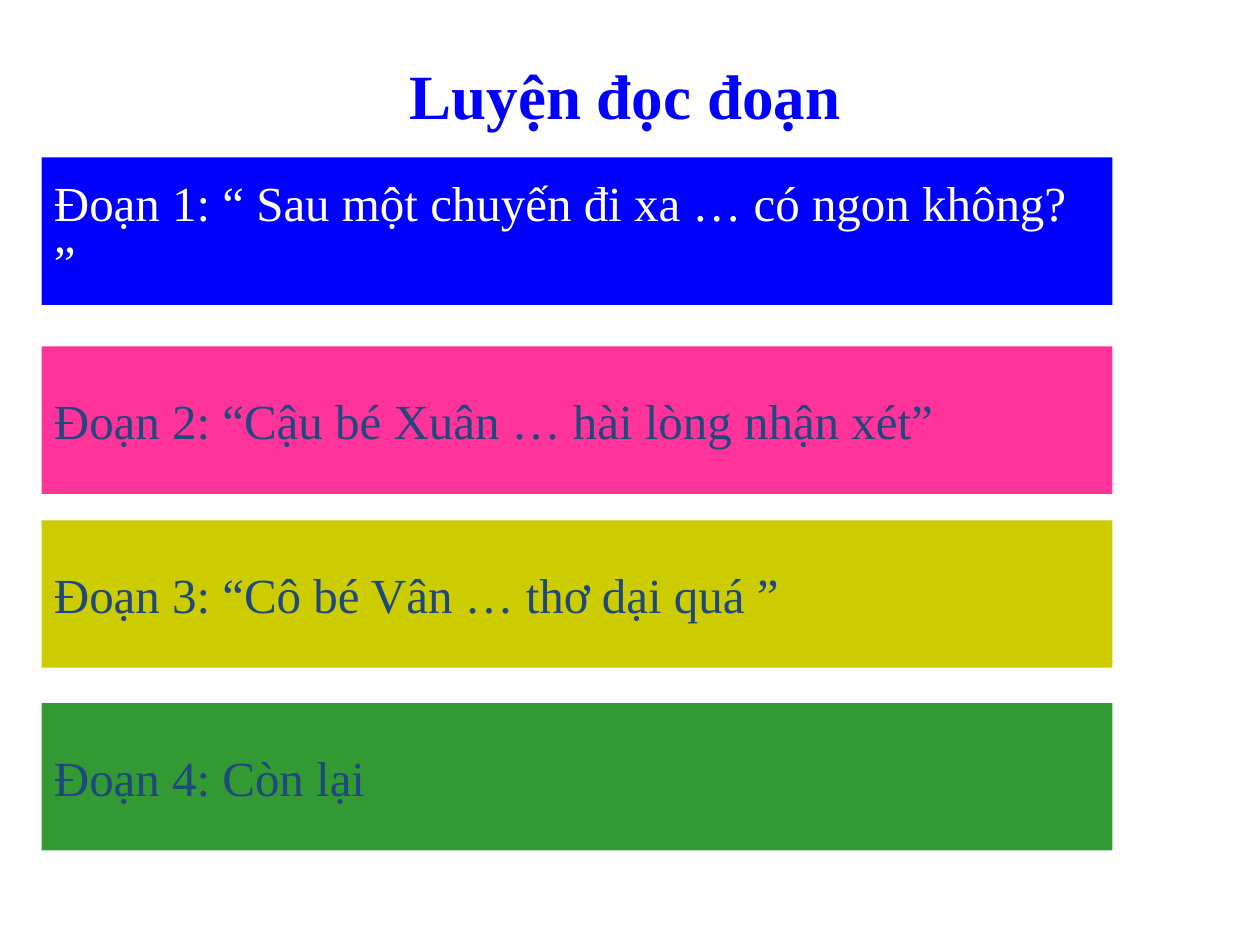
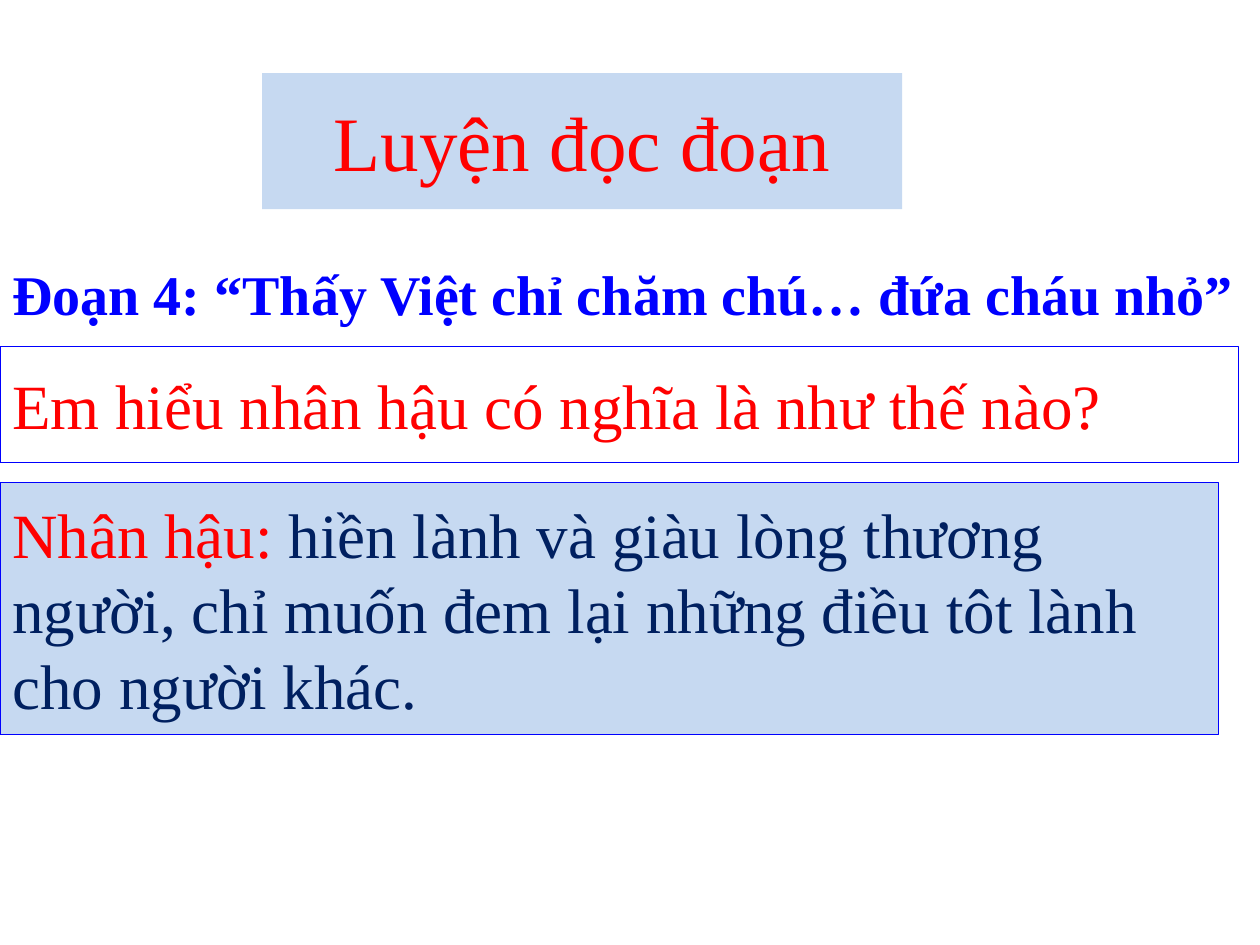
from dataclasses import dataclass

from pptx import Presentation
from pptx.dml.color import RGBColor
from pptx.enum.shapes import MSO_SHAPE
from pptx.enum.text import MSO_ANCHOR, MSO_AUTO_SIZE, PP_ALIGN
from pptx.util import Inches, Pt

FONT = "Times New Roman"
TITLE = "Luyện đọc đoạn"
BLUE, RED, WHITE = "0000FF", "FF0000", "FFFFFF"
PALE_BLUE, SLATE, NAVY = "C6D9F1", "1F497D", "002060"
TITLE_ONLY = 5


@dataclass
class Span:
    text: str
    color: str
    size: int
    bold: bool = False


@dataclass
class Panel:
    left: float
    top: float
    width: float
    height: float
    spans: list[Span]
    fill: str | None = None
    line: str | None = None


def rgb(value: str) -> RGBColor:
    return RGBColor.from_string(value)


def write(box, spans: list[Span], align) -> None:
    frame = box.text_frame
    frame.word_wrap = True
    frame.auto_size = MSO_AUTO_SIZE.NONE
    frame.vertical_anchor = MSO_ANCHOR.MIDDLE
    para = frame.paragraphs[0]
    para.alignment = align
    for span in spans:
        run = para.add_run()
        run.text = span.text
        run.font.name = FONT
        run.font.size = Pt(span.size)
        run.font.bold = span.bold
        run.font.color.rgb = rgb(span.color)


def paint(box, panel: Panel) -> None:
    """Apply the panel's fill and outline, or clear them."""
    if panel.fill:
        box.fill.solid()
        box.fill.fore_color.rgb = rgb(panel.fill)
    else:
        box.fill.background()
    if panel.line:
        box.line.color.rgb = rgb(panel.line)
        box.line.width = Pt(0.75)
    else:
        box.line.fill.background()


def set_title(page, panel: Panel) -> None:
    title = page.shapes.title
    title.left, title.top = Inches(panel.left), Inches(panel.top)
    title.width, title.height = Inches(panel.width), Inches(panel.height)
    paint(title, panel)
    write(title, panel.spans, PP_ALIGN.CENTER)


def add_panel(page, panel: Panel) -> None:
    area = [Inches(v) for v in (panel.left, panel.top, panel.width, panel.height)]
    if panel.fill or panel.line:
        box = page.shapes.add_shape(MSO_SHAPE.RECTANGLE, *area)
        box.shadow.inherit = False
    else:
        box = page.shapes.add_textbox(*area)
    paint(box, panel)
    write(box, panel.spans, PP_ALIGN.LEFT)


def add_page(deck, title: Panel, panels: list[Panel]) -> None:
    page = deck.slides.add_slide(deck.slide_layouts[TITLE_ONLY])
    set_title(page, title)
    for panel in panels:
        add_panel(page, panel)


def passage(top: float, text: str, fill: str, color: str = SLATE) -> Panel:
    return Panel(0.33, top, 8.5, 1.17, [Span(text, color, 28)], fill)


def main() -> None:
    deck = Presentation()
    deck.slide_width, deck.slide_height = Inches(10), Inches(7.5)

    add_page(
        deck,
        Panel(2.67, 0.33, 4.58, 0.83, [Span(TITLE, BLUE, 36, bold=True)]),
        [
            passage(1.25, "Đoạn 1: “ Sau một chuyến đi xa … có ngon không? ”", BLUE, WHITE),
            passage(2.75, "Đoạn 2: “Cậu bé Xuân … hài lòng nhận xét”", "FF3399"),
            passage(4.13, "Đoạn 3: “Cô bé Vân … thơ dại quá ”", "CCCC00"),
            passage(5.58, "Đoạn 4: Còn lại", "339933"),
        ],
    )

    heading = Span("Đoạn 4: “Thấy Việt chỉ chăm chú… đứa cháu nhỏ”", BLUE, 32, bold=True)
    question = Span("Em hiểu nhân hậu có nghĩa là như thế nào?", RED, 36)
    answer = [
        Span("Nhân hậu: ", RED, 36),
        Span(
            "hiền lành và giàu lòng thương người, chỉ muốn đem lại "
            "những điều tôt lành cho người khác.",
            NAVY,
            36,
        ),
    ]
    add_page(
        deck,
        Panel(2.08, 0.58, 5.08, 1.08, [Span(TITLE, RED, 44)], PALE_BLUE),
        [
            Panel(0, 1.83, 10, 1, [heading]),
            Panel(0, 2.75, 9.83, 0.92, [question], line=BLUE),
            Panel(0, 3.83, 9.67, 2, answer, PALE_BLUE, BLUE),
        ],
    )
    deck.save("out.pptx")


if __name__ == "__main__":
    main()
